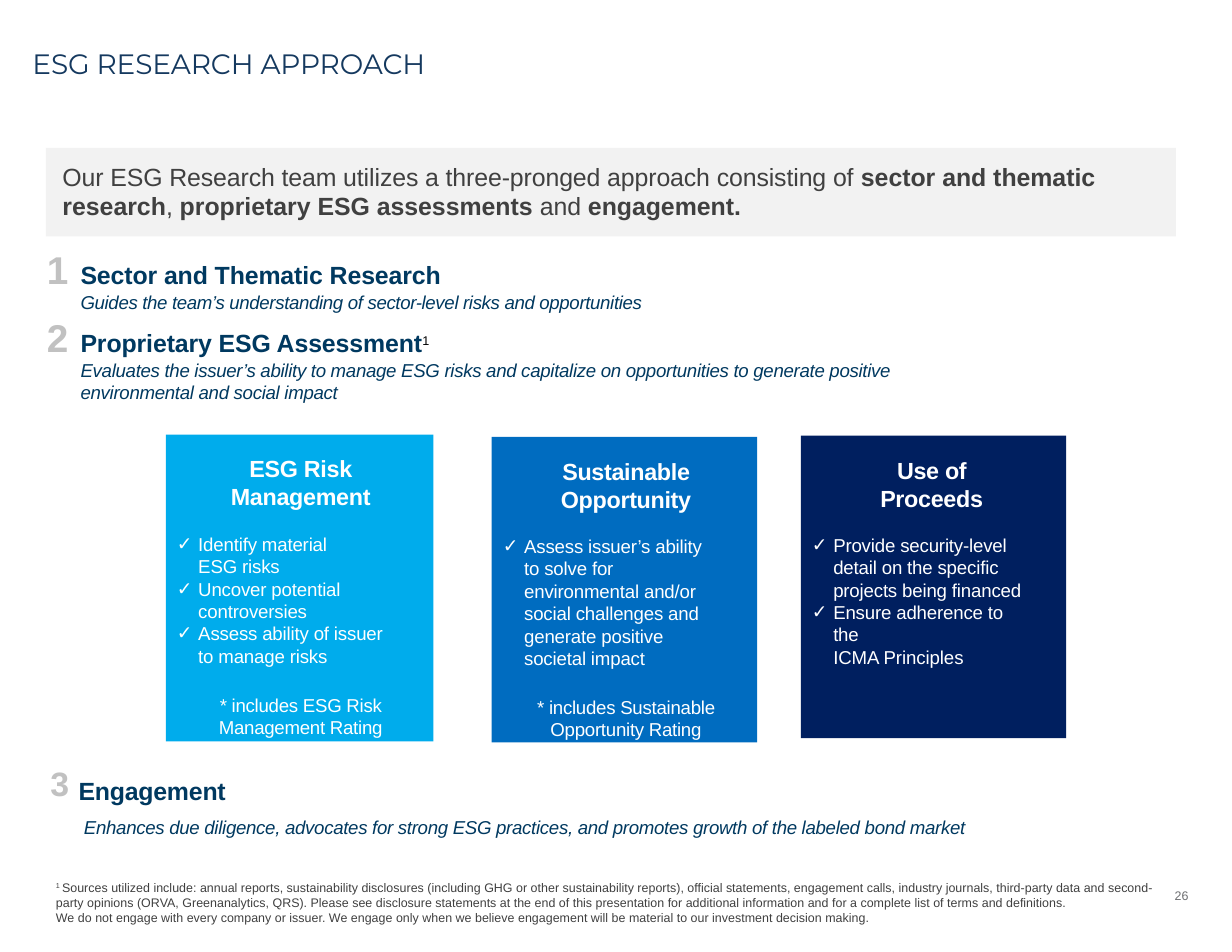
from dataclasses import dataclass

from lxml import etree
from pptx import Presentation
from pptx.dml.color import RGBColor
from pptx.enum.shapes import MSO_SHAPE
from pptx.enum.text import MSO_ANCHOR, PP_ALIGN
from pptx.oxml.ns import qn
from pptx.util import Inches, Pt

LEFT, CENTER, RIGHT = PP_ALIGN.LEFT, PP_ALIGN.CENTER, PP_ALIGN.RIGHT
TOP = MSO_ANCHOR.TOP
RECTANGLE = MSO_SHAPE.RECTANGLE


@dataclass(frozen=True)
class Theme:
    body_font: str = "Arial"
    title_font: str = "Montserrat"
    title_color: str = "15395F"
    heading_color: str = "003960"
    body_color: str = "404040"
    number_color: str = "C1C1C1"
    page_color: str = "6D6E71"
    black: str = "000000"
    white: str = "FFFFFF"
    banner: str = "F2F2F2"
    light_blue: str = "00ACEC"
    blue: str = "006CC0"
    navy: str = "001F5F"
    title_size: float = 18
    heading_size: float = 16
    card_heading_size: float = 15
    text_size: float = 12
    note_size: float = 8
    mark_size: float = 14
    number_size: float = 37.5
    number_percent: int = 156


THEME = Theme()


def add_run(paragraph, text, size=THEME.text_size, color=THEME.white, font=THEME.body_font,
            bold=False, italic=False, spacing=0, baseline=0):
    run = paragraph.add_run()
    run.text = text
    run.font.size = Pt(size)
    run.font.name = font
    run.font.bold = bold
    run.font.italic = italic
    run.font.color.rgb = RGBColor.from_string(color)
    properties = run.font._element
    if spacing:
        properties.set("spc", str(round(spacing * 100)))
    if baseline:
        properties.set("baseline", str(baseline * 1000))


def add_paragraph(frame, align=LEFT, left=0, first=0, right=0, before=0, line=None):
    paragraph = frame.paragraphs[0]
    if paragraph.runs:
        paragraph = frame.add_paragraph()
    paragraph.alignment = align
    paragraph.space_before = Pt(before)
    if line:
        paragraph.line_spacing = line
    properties = paragraph._p.get_or_add_pPr()
    for name, value in (("marL", left), ("indent", first), ("marR", right)):
        properties.set(name, str(Inches(value)))
    return paragraph


def add_element(parent, tag, **attributes):
    element = etree.SubElement(parent, qn(tag))
    for name, value in attributes.items():
        element.set(name, str(value))
    return element


def add_tab(properties, position):
    tabs = add_element(properties, "a:tabLst")
    add_element(tabs, "a:tab", pos=Inches(position), algn="l")


def add_check_item(frame, text, right, before=0):
    paragraph = add_paragraph(frame, left=0.29, first=-0.19, right=right, before=before)
    properties = paragraph._p.get_or_add_pPr()
    add_element(properties, "a:buFont", typeface=THEME.body_font)
    add_element(properties, "a:buChar", char="✓")
    add_tab(properties, 0.29)
    add_run(paragraph, text, spacing=-0.12)


def add_numbered_heading(frame, number, text, line=None):
    paragraph = add_paragraph(frame, left=0.36, first=-0.3, line=line)
    properties = paragraph._p.get_or_add_pPr()
    color = add_element(properties, "a:buClr")
    add_element(color, "a:srgbClr", val=THEME.number_color)
    add_element(properties, "a:buSzPct", val=THEME.number_percent * 1000)
    add_element(properties, "a:buFont", typeface=THEME.body_font)
    add_element(properties, "a:buAutoNum", type="arabicPlain", startAt=number)
    add_tab(properties, 0.36)
    add_run(paragraph, text, size=THEME.heading_size, color=THEME.heading_color,
            bold=True, spacing=-0.05)
    return paragraph


def add_summary(frame, text, spacing, **layout):
    paragraph = add_paragraph(frame, **layout)
    add_run(paragraph, text, color=THEME.heading_color, italic=True, spacing=spacing)


def prepare_frame(shape, margins):
    frame = shape.text_frame
    frame.word_wrap = True
    frame.vertical_anchor = TOP
    frame.margin_left, frame.margin_top, frame.margin_right, frame.margin_bottom = map(Inches, margins)
    return frame


def add_text_box(slide, left, top, width, height, margins=(0, 0, 0, 0)):
    shape = slide.shapes.add_textbox(Inches(left), Inches(top), Inches(width), Inches(height))
    return prepare_frame(shape, margins)


def add_rectangle(slide, left, top, width, height, color):
    shape = slide.shapes.add_shape(RECTANGLE, Inches(left), Inches(top), Inches(width), Inches(height))
    shape.shadow.inherit = False
    shape.fill.solid()
    shape.fill.fore_color.rgb = RGBColor.from_string(color)
    shape.line.fill.background()
    return shape


def add_card(slide, box, color, heading, heading_layout, items):
    frame = prepare_frame(add_rectangle(slide, *box, color), (0, 0.18, 0, 0))
    add_run(add_paragraph(frame, **heading_layout), heading,
            size=THEME.card_heading_size, bold=True, spacing=-0.2)
    for index, (text, right) in enumerate(items):
        add_check_item(frame, text, right, before=0 if index else 14.1)
    return frame


def add_rating_note(frame, text, left, right):
    paragraph = add_paragraph(frame, align=CENTER, left=left, right=right, before=17)
    add_run(paragraph, text, spacing=-0.18)


def add_cards(slide):
    risk = add_card(slide, (1.48, 3.88, 2.39, 2.74), THEME.light_blue, "ESG Risk Management",
                    dict(align=CENTER, left=0.57, right=0.55),
                    [("Identify material ESG risks", 0.75),
                     ("Uncover potential controversies", 0.75),
                     ("Assess ability of issuer to manage risks", 0.35)])
    add_rating_note(risk, "* includes ESG Risk Management Rating", 0.45, 0.43)
    opportunity = add_card(slide, (4.39, 3.9, 2.37, 2.73), THEME.blue, "Sustainable Opportunity",
                           dict(align=CENTER, left=0.6, right=0.57),
                           [("Assess issuer’s ability to solve for environmental and/or social "
                             "challenges and generate positive societal impact", 0.4)])
    add_rating_note(opportunity, "* includes Sustainable Opportunity Rating", 0.38, 0.35)
    proceeds = add_card(slide, (7.15, 3.89, 2.37, 2.7), THEME.navy, "Use of Proceeds",
                        dict(left=0.71, first=0.15, right=0.65),
                        [("Provide security-level detail on the specific projects being financed", 0.3),
                         ("Ensure adherence to the", 0.4)])
    add_run(add_paragraph(proceeds, left=0.29), "ICMA Principles", spacing=-0.05)


def add_banner(slide):
    add_rectangle(slide, 0.41, 1.32, 10.09, 0.79, THEME.banner)
    frame = add_text_box(slide, 0.36, 1.39, 10.14, 0.64, (0.1, 0.05, 0.1, 0.05))
    lines = [
        [("Our ESG Research team utilizes a three-pronged approach consisting of ", False),
         ("sector and thematic", True)],
        [("research", True), (", ", False), ("proprietary ESG assessments ", True),
         ("and ", False), ("engagement.", True)],
    ]
    for line in lines:
        paragraph = add_paragraph(frame, left=0.1)
        for text, bold in line:
            add_run(paragraph, text, size=THEME.heading_size, color=THEME.body_color,
                    bold=bold, spacing=0 if bold else -0.05)


def add_approaches(slide):
    frame = add_text_box(slide, 0.36, 2.31, 7.94, 1.3, (0, 0.01, 0, 0))
    add_numbered_heading(frame, 1, "Sector and Thematic Research")
    add_summary(frame, "Guides the team’s understanding of sector-level risks and opportunities",
                -0.22, left=0.36, before=0.2, line=Pt(15))
    heading = add_numbered_heading(frame, 2, "Proprietary ESG Assessment", line=Pt(28.2))
    add_run(heading, "1", size=THEME.mark_size, color=THEME.black, baseline=30)
    add_summary(frame, "Evaluates the issuer’s ability to manage ESG risks and capitalize on "
                "opportunities to generate positive environmental and social impact",
                -0.19, left=0.36, before=0.7, line=1.01)


def add_engagement(slide):
    frame = add_text_box(slide, 0.41, 6.83, 9.57, 0.67, (0, 0.01, 0, 0))
    heading = add_paragraph(frame, left=0.04, line=Pt(29.7))
    add_run(heading, "3 ", size=THEME.number_size, color=THEME.number_color, bold=True, baseline=7)
    add_run(heading, "Engagement", size=THEME.heading_size, color=THEME.heading_color,
            bold=True, spacing=-0.1)
    add_summary(frame, "Enhances due diligence, advocates for strong ESG practices, and promotes "
                "growth of the labeled bond market", -0.19, left=0.34, line=Pt(16.5))


def add_footer(slide):
    note = dict(size=THEME.note_size, color=THEME.body_color)
    frame = add_text_box(slide, 0.5, 7.86, 10, 0.5)
    sources = add_paragraph(frame)
    add_run(sources, "1 ", baseline=30, **note)
    add_run(sources, "Sources utilized include: annual reports, sustainability disclosures (including "
            "GHG or other sustainability reports), official statements, engagement calls, industry "
            "journals, third-party data and second-party opinions (ORVA, Greenanalytics, QRS). Please see "
            "disclosure statements at the end of this presentation for additional information and for "
            "a complete list of terms and definitions.", **note)
    add_run(add_paragraph(frame), "We do not engage with every company or issuer. We engage only when we "
            "believe engagement will be material to our investment decision making.", **note)
    page = add_text_box(slide, 7.94, 7.88, 2.77, 0.45, (0.1, 0.05, 0.1, 0.05))
    add_run(add_paragraph(page, align=RIGHT), "26", size=THEME.note_size, color=THEME.page_color)


def main():
    presentation = Presentation()
    presentation.slide_width, presentation.slide_height = Inches(11), Inches(8.5)
    slide = presentation.slides.add_slide(presentation.slide_layouts[6])
    title = add_text_box(slide, 0.29, 0.45, 7.52, 0.27)
    add_run(add_paragraph(title, line=0.9), "ESG RESEARCH APPROACH", size=THEME.title_size,
            color=THEME.title_color, font=THEME.title_font, spacing=-0.1)
    add_banner(slide)
    add_approaches(slide)
    add_cards(slide)
    add_engagement(slide)
    add_footer(slide)
    presentation.save("out.pptx")


if __name__ == "__main__":
    main()
